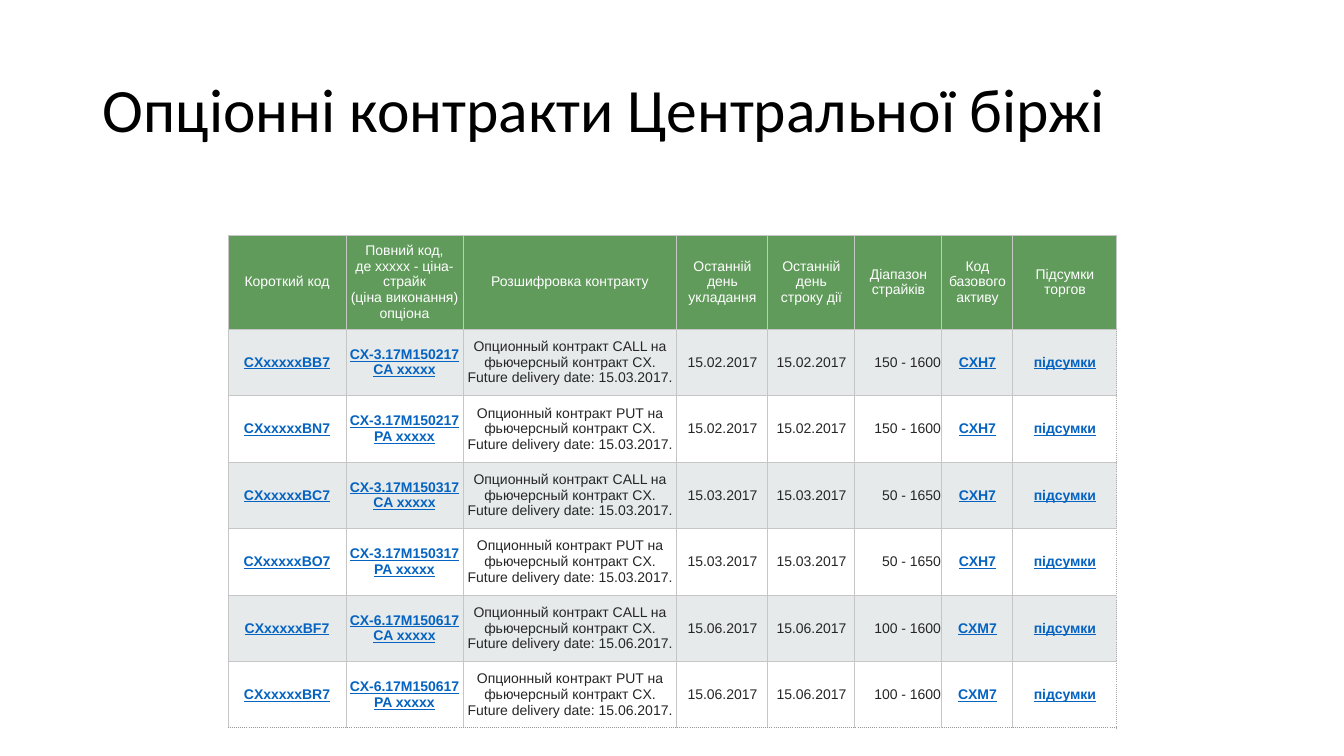
from lxml import etree
from pptx import Presentation
from pptx.dml.color import RGBColor
from pptx.enum.text import MSO_ANCHOR, PP_ALIGN
from pptx.oxml.ns import qn
from pptx.util import Emu, Pt

MIDDLE = MSO_ANCHOR.MIDDLE
CENTER, RIGHT = PP_ALIGN.CENTER, PP_ALIGN.RIGHT

TITLE = "Опціонні контракти Центральної біржі"
HEADERS = [
    "Короткий код",
    "Повний код,\nде xxxxx - ціна-страйк\n(ціна виконання) опціона",
    "Розшифровка контракту",
    "Останній\nдень\nукладання",
    "Останній\nдень\nстроку дії",
    "Діапазон\nстрайків",
    "Код\nбазового\nактиву",
    "Підсумки\nторгов",
]
CONTRACTS = [
    ("CXxxxxxBB7", "CX-3.17M150217CA xxxxx", "CALL", "15.03.2017", "15.02.2017", "150 - 1600", "CXH7"),
    ("CXxxxxxBN7", "CX-3.17M150217PA xxxxx", "PUT", "15.03.2017", "15.02.2017", "150 - 1600", "CXH7"),
    ("CXxxxxxBC7", "CX-3.17M150317CA xxxxx", "CALL", "15.03.2017", "15.03.2017", "50 - 1650", "CXH7"),
    ("CXxxxxxBO7", "CX-3.17M150317PA xxxxx", "PUT", "15.03.2017", "15.03.2017", "50 - 1650", "CXH7"),
    ("CXxxxxxBF7", "CX-6.17M150617CA xxxxx", "CALL", "15.06.2017", "15.06.2017", "100 - 1600", "CXM7"),
    ("CXxxxxxBR7", "CX-6.17M150617PA xxxxx", "PUT", "15.06.2017", "15.06.2017", "100 - 1600", "CXM7"),
]
RESULTS = "підсумки"
LINK_COLUMNS = {0, 1, 6, 7}
STRIKE_COLUMN = 5

COLUMN_WIDTHS = [118, 117, 214, 91, 87, 87, 71, 104]
TABLE_LEFT, TABLE_TOP = 228, 235
HEADER_HEIGHT, BODY_HEIGHT = 86, 399

BLACK = RGBColor(0x00, 0x00, 0x00)
WHITE = RGBColor(0xFF, 0xFF, 0xFF)
GREEN = RGBColor(0x60, 0x9B, 0x5B)
BAND = RGBColor(0xE6, 0xEA, 0xEB)
INK = RGBColor(0x26, 0x26, 0x26)
LINK = RGBColor(0x05, 0x63, 0xC1)
GRID = RGBColor(0xC6, 0xC6, 0xC6)
RIGHT_EDGE = RGBColor(0xAA, 0xAA, 0xAA)
BOTTOM_EDGE = RGBColor(0x99, 0x99, 0x99)


def px(length):
    return Emu(round(length * 914400 / 100.8))


def add_border(cell, side, color, dash):
    line = etree.SubElement(cell._tc.get_or_add_tcPr(), qn("a:ln" + side), w=str(Pt(0.75)))
    fill = etree.SubElement(line, qn("a:solidFill"))
    etree.SubElement(fill, qn("a:srgbClr"), val=str(color))
    etree.SubElement(line, qn("a:prstDash"), val=dash)


def contract_row(short_code, full_code, kind, delivery, last_day, strikes, base):
    description = (f"Опционный контракт {kind} на фьючерсный контракт {base[:2]}. "
                   f"Future delivery date: {delivery}.")
    return [short_code, full_code, description, last_day, last_day, strikes, base, RESULTS]


def fill_cell(cell, text, row, column, last_row, last_column):
    is_header = row == 0
    is_link = not is_header and column in LINK_COLUMNS
    cell.vertical_anchor = MIDDLE
    cell.margin_left = cell.margin_right = px(1)
    cell.margin_top = cell.margin_bottom = px(5)

    paragraph = cell.text_frame.paragraphs[0]
    paragraph.text = text
    paragraph.alignment = RIGHT if column == STRIKE_COLUMN and not is_header else CENTER
    for run in paragraph.runs:
        run.font.name = "Arial"
        run.font.size = Pt(10)
        run.font.bold = run.font.underline = is_link
        run.font.color.rgb = WHITE if is_header else LINK if is_link else INK

    borders = {side: (GRID, "solid") for side in "LRTB"}
    if column == last_column and not is_header:
        borders["R"] = (RIGHT_EDGE, "sysDot")
    if row == last_row:
        borders["B"] = (BOTTOM_EDGE, "sysDot")
    for side, (color, dash) in borders.items():
        add_border(cell, side, color, dash)

    cell.fill.solid()
    cell.fill.fore_color.rgb = GREEN if is_header else BAND if row % 2 else WHITE


def main():
    presentation = Presentation()
    presentation.slide_width, presentation.slide_height = px(1344), px(756)
    slide = presentation.slides.add_slide(presentation.slide_layouts[6])

    title = slide.shapes.add_textbox(px(93), px(40), px(1159), px(146)).text_frame
    title.word_wrap = True
    title.vertical_anchor = MIDDLE
    title.text = TITLE
    heading = title.paragraphs[0]
    heading.line_spacing = 0.9
    heading_font = heading.runs[0].font
    heading_font.name = "Calibri"
    heading_font.size = Pt(44)
    heading_font.color.rgb = BLACK

    rows = [HEADERS] + [contract_row(*contract) for contract in CONTRACTS]
    contracts = slide.shapes.add_table(
        len(rows), len(HEADERS), px(TABLE_LEFT), px(TABLE_TOP),
        px(sum(COLUMN_WIDTHS)), px(HEADER_HEIGHT + BODY_HEIGHT)).table
    for column, width in zip(contracts.columns, COLUMN_WIDTHS):
        column.width = px(width)
    for index, table_row in enumerate(contracts.rows):
        table_row.height = px(BODY_HEIGHT / len(CONTRACTS) if index else HEADER_HEIGHT)
    for r, texts in enumerate(rows):
        for c, text in enumerate(texts):
            fill_cell(contracts.cell(r, c), text, r, c, len(rows) - 1, len(HEADERS) - 1)

    presentation.save("out.pptx")


if __name__ == "__main__":
    main()
